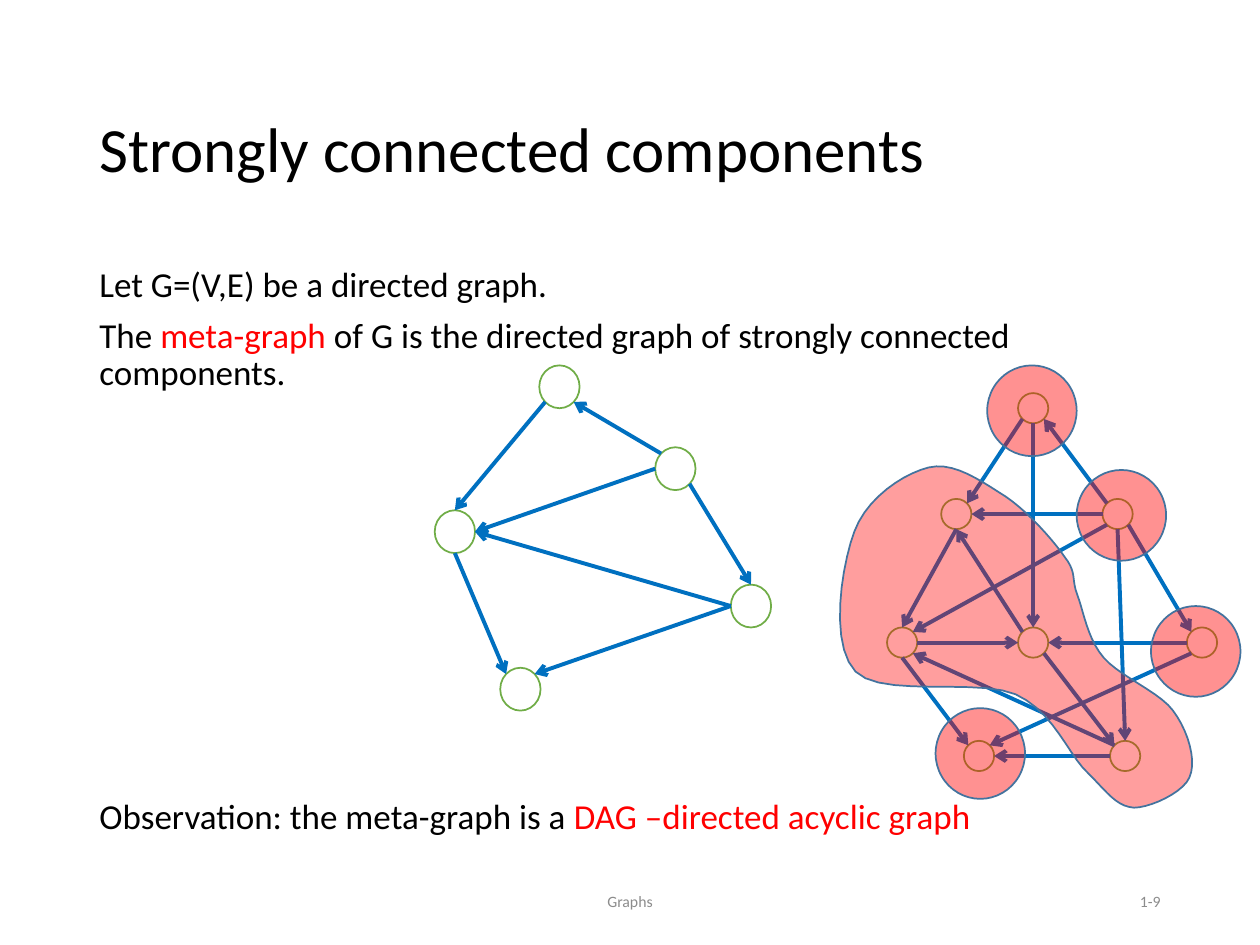
"""Build a slide on strongly connected components and the meta-graph."""
from dataclasses import dataclass
from enum import IntEnum
from math import cos, pi, sin

from lxml.etree import SubElement
from pptx import Presentation
from pptx.dml.color import RGBColor
from pptx.enum.shapes import MSO_CONNECTOR, MSO_SHAPE
from pptx.enum.text import MSO_ANCHOR, PP_ALIGN
from pptx.oxml.ns import qn
from pptx.util import Inches, Pt


@dataclass(frozen=True)
class Theme:
    font: str = "Calibri"
    title_size: int = 36
    body_size: int = 20
    footer_size: int = 9
    node_line: float = 1
    edge_line: float = 2.25
    black: str = "000000"
    white: str = "FFFFFF"
    grey: str = "8C8C8C"
    red: str = "FF0000"
    green: str = "70AD47"
    blue: str = "0070C0"
    outline: str = "43739E"
    halo_alpha: int = 43
    region_alpha: int = 38


class Site(IntEnum):
    N = 0
    NW = 1
    W = 2
    SW = 3
    S = 4
    SE = 5
    E = 6
    NE = 7


@dataclass(frozen=True)
class Edge:
    src: str
    leave: Site
    dst: str
    enter: Site


@dataclass(frozen=True)
class Graph:
    node_w: float
    node_h: float
    nodes: dict[str, tuple[float, float]]
    edges: list[Edge]

    def point(self, name: str, site: Site) -> tuple[float, float]:
        x, y = self.nodes[name]
        angle = pi / 2 + site * pi / 4
        return x + self.node_w / 2 * cos(angle), y - self.node_h / 2 * sin(angle)


@dataclass(frozen=True)
class Para:
    runs: list[tuple[str, str]]
    size: int
    before: float = 0
    spacing: float = 1
    align: PP_ALIGN = PP_ALIGN.LEFT


T = Theme()
N, NW, W, SW, S, SE, E, NE = Site

META = Graph(
    0.32, 0.34,
    {"top": (4.44, 3.07), "source": (5.36, 3.72), "merged": (3.61, 4.22),
     "right": (5.96, 4.81), "sink": (4.13, 5.47)},
    [Edge("source", NW, "top", SE), Edge("top", SW, "merged", N),
     Edge("source", W, "merged", E), Edge("source", SE, "right", N),
     Edge("right", W, "merged", E), Edge("merged", S, "sink", NW),
     Edge("right", W, "sink", NE)],
)
FULL = Graph(
    0.24, 0.24,
    {"a": (8.2, 3.24), "b": (7.59, 4.08), "c": (8.87, 4.08), "d": (7.16, 5.1),
     "e": (8.2, 5.1), "f": (9.54, 5.1), "g": (7.77, 6), "h": (8.93, 6)},
    [Edge("c", NW, "a", SE), Edge("a", SW, "b", NE), Edge("c", SE, "f", NW),
     Edge("c", W, "b", E), Edge("b", S, "d", N), Edge("e", NW, "b", S),
     Edge("d", E, "e", W), Edge("f", W, "e", E), Edge("c", SW, "d", NE),
     Edge("h", NW, "d", SE), Edge("c", S, "h", N), Edge("e", SE, "h", NW),
     Edge("d", S, "g", NW), Edge("f", SW, "g", NE), Edge("a", S, "e", N),
     Edge("h", W, "g", E)],
)
HALOS = [(8.9, 4.09), (8.19, 3.26), (9.49, 5.17), (7.78, 5.98)]
HALO_SIZE = (0.71, 0.72)
REGION_START = (7.98, 3.94)
REGION_CURVES = [
    ((7.79, 3.82), (7.57, 3.66), (7.37, 3.71)),
    ((7.17, 3.76), (6.88, 3.95), (6.78, 4.22)),
    ((6.68, 4.49), (6.58, 5.11), (6.79, 5.33)),
    ((7, 5.54), (7.75, 5.38), (8.06, 5.51)),
    ((8.37, 5.65), (8.48, 6), (8.64, 6.14)),
    ((8.79, 6.29), (8.86, 6.4), (9, 6.41)),
    ((9.13, 6.41), (9.39, 6.29), (9.44, 6.17)),
    ((9.5, 6.04), (9.43, 5.8), (9.31, 5.64)),
    ((9.2, 5.49), (8.89, 5.37), (8.76, 5.22)),
    ((8.63, 5.07), (8.6, 4.85), (8.55, 4.72)),
    ((8.5, 4.59), (8.55, 4.55), (8.45, 4.42)),
    ((8.36, 4.29), (8.16, 4.06), REGION_START),
]


def style(sp, fill: str, line: str, alpha: int = 100) -> None:
    sp.shadow.inherit = False
    sp.fill.solid()
    sp.fill.fore_color.rgb = RGBColor.from_string(fill)
    sp.line.color.rgb = RGBColor.from_string(line)
    sp.line.width = Pt(T.node_line)
    if alpha < 100:
        color = sp.fill._xPr.find(qn("a:solidFill"))[0]
        SubElement(color, qn("a:alpha"), val=str(alpha * 1000))


def add_ellipse(shapes, center: tuple[float, float], w: float, h: float,
                fill: str, line: str, alpha: int = 100) -> None:
    x, y = center
    sp = shapes.add_shape(MSO_SHAPE.OVAL, Inches(x - w / 2), Inches(y - h / 2),
                          Inches(w), Inches(h))
    style(sp, fill, line, alpha)


def add_arrow(shapes, start: tuple[float, float], end: tuple[float, float]) -> None:
    cx = shapes.add_connector(MSO_CONNECTOR.STRAIGHT,
                              *(Inches(v) for v in (*start, *end)))
    cx.line.color.rgb = RGBColor.from_string(T.blue)
    cx.line.width = Pt(T.edge_line)
    SubElement(cx.line._get_or_add_ln(), qn("a:tailEnd"), type="arrow")
    SubElement(cx._element.spPr, qn("a:effectLst"))


def add_graph(shapes, graph: Graph) -> None:
    for center in graph.nodes.values():
        add_ellipse(shapes, center, graph.node_w, graph.node_h, T.white, T.green)
    for edge in graph.edges:
        add_arrow(shapes, graph.point(edge.src, edge.leave),
                  graph.point(edge.dst, edge.enter))


def add_region(shapes, steps: int = 10) -> None:
    p0, points = REGION_START, []
    for p1, p2, p3 in REGION_CURVES:
        for t in (i / steps for i in range(1, steps + 1)):
            u = 1 - t
            points.append(tuple(
                Inches(u**3 * a + 3 * u * u * t * b + 3 * u * t * t * c + t**3 * d)
                for a, b, c, d in zip(p0, p1, p2, p3)))
        p0 = p3
    builder = shapes.build_freeform(*(Inches(v) for v in REGION_START))
    builder.add_line_segments(points, close=True)
    style(builder.convert_to_shape(), T.red, T.outline, T.region_alpha)


def add_text(shapes, box: tuple[float, float, float, float], paras: list[Para],
             anchor: MSO_ANCHOR = MSO_ANCHOR.MIDDLE) -> None:
    tf = shapes.add_textbox(*(Inches(v) for v in box)).text_frame
    tf.word_wrap = True
    tf.vertical_anchor = anchor
    for i, para in enumerate(paras):
        p = tf.add_paragraph() if i else tf.paragraphs[0]
        p.alignment, p.line_spacing = para.align, para.spacing
        p.space_before = Pt(para.before)
        for text, color in para.runs:
            r = p.add_run()
            r.text = text
            r.font.name, r.font.size = T.font, Pt(para.size)
            r.font.color.rgb = RGBColor.from_string(color)


def main() -> None:
    prs = Presentation()
    prs.slide_width, prs.slide_height = Inches(10), Inches(7.5)
    shapes = prs.slides.add_slide(prs.slide_layouts[6]).shapes
    add_text(shapes, (0.69, 0.4, 8.62, 1.45), [
        Para([("Strongly connected components", T.black)], T.title_size, 6, 1.15)])
    add_text(shapes, (3.31, 6.95, 3.38, 0.4), [
        Para([("Graphs", T.grey)], T.footer_size, align=PP_ALIGN.CENTER)])
    add_text(shapes, (7.06, 6.95, 2.25, 0.4), [
        Para([("1-9", T.grey)], T.footer_size, align=PP_ALIGN.RIGHT)])
    add_text(shapes, (0.69, 2.07, 8.62, 4.76), [
        Para([("Let G=(V,E) be a directed graph.", T.black)], T.body_size, 7.5, 0.9),
        Para([("The ", T.black), ("meta-graph", T.red),
              (" of G is the directed graph of strongly connected components.",
               T.black)], T.body_size, 7.5, 0.9),
        Para([("Observation: the meta-graph is a ", T.black),
              ("DAG –directed acyclic graph", T.red)], T.body_size, 232, 0.9),
    ], MSO_ANCHOR.TOP)
    full = shapes.add_group_shape().shapes
    add_graph(full, FULL)
    for center in HALOS:
        add_ellipse(full, center, *HALO_SIZE, T.red, T.outline, T.halo_alpha)
    add_region(full)
    add_graph(shapes.add_group_shape().shapes, META)
    prs.save("out.pptx")


if __name__ == "__main__":
    main()
